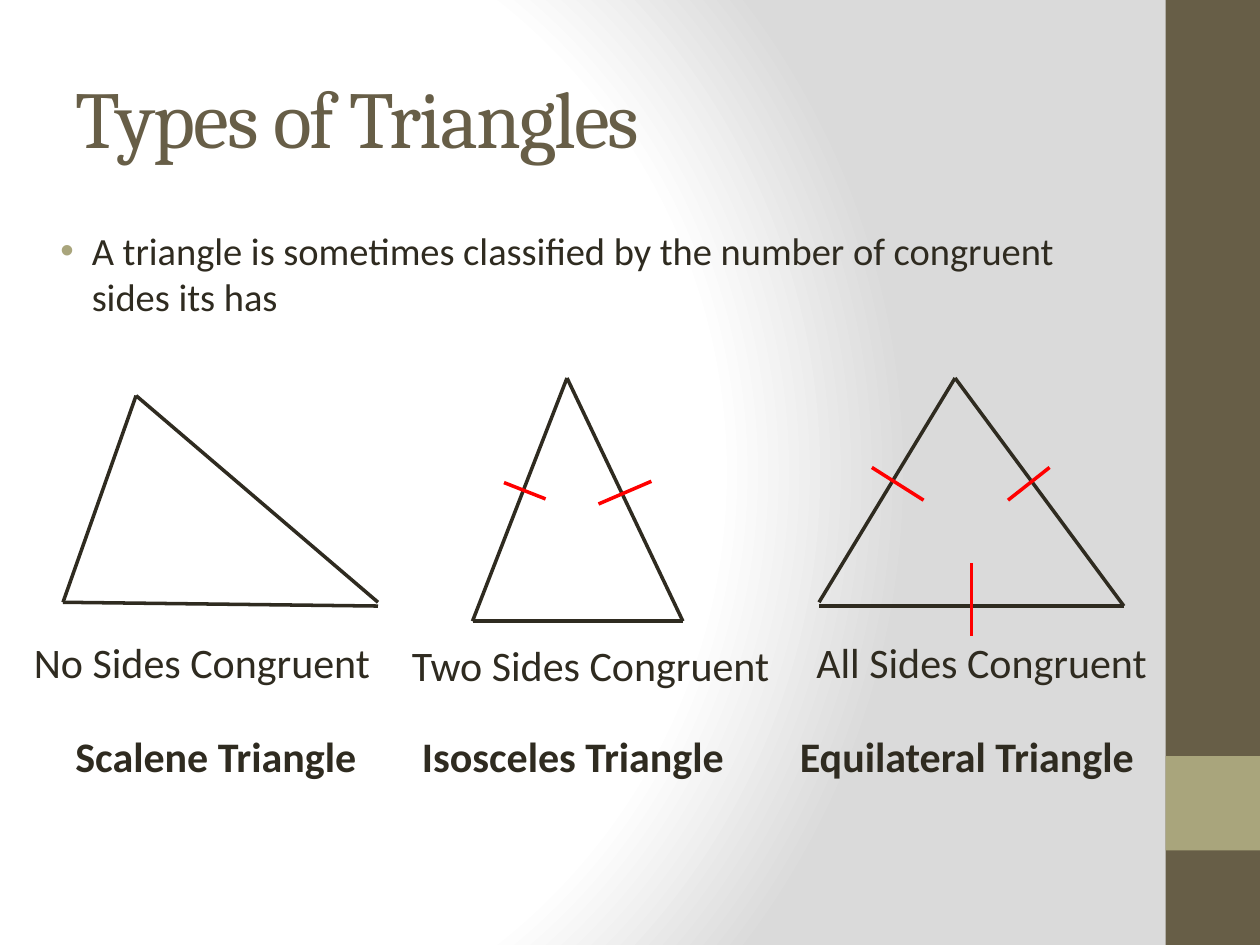
from pptx import Presentation
from pptx.dml.color import RGBColor
from pptx.enum.shapes import MSO_CONNECTOR, MSO_SHAPE
from pptx.enum.text import MSO_ANCHOR
from pptx.oxml import parse_xml
from pptx.oxml.ns import nsdecls, qn
from pptx.util import Inches, Pt

LINE = MSO_CONNECTOR.STRAIGHT
RECT = MSO_SHAPE.RECTANGLE
MIDDLE = MSO_ANCHOR.MIDDLE
TOP = MSO_ANCHOR.TOP

COLORS = {"brown": "675E47", "olive": "A9A57C", "ink": "2F2B20",
          "tick": "FF0000", "white": "FFFFFF", "gray": "DADADA"}

TITLE = "Types of Triangles"
BODY = ("A triangle is sometimes classified by the number of congruent "
        "sides its has")
BANDS = [("brown", 0, 7.5), ("olive", 6, 0.75)]
STOPS = [(0, "white"), (75, "white"), (100, "gray")]

# Sides and ticks are (x1, y1, x2, y2); captions are (text, left, top)
TRIANGLES = [
    {"sides": [(1.08, 3.14, 3, 4.78), (0.5, 4.78, 3, 4.81),
               (1.08, 3.14, 0.5, 4.78)],
     "ticks": [],
     "rule": ("No Sides Congruent", 0.17, 5),
     "name": ("Scalene Triangle", 0.5, 5.75)},
    {"sides": [(4.5, 3, 3.75, 4.93), (4.5, 3, 5.42, 4.93),
               (3.75, 4.93, 5.42, 4.93)],
     "ticks": [(4, 3.83, 4.33, 3.96), (5.17, 3.82, 4.75, 4)],
     "rule": ("Two Sides Congruent", 3.17, 5.03),
     "name": ("Isosceles Triangle", 3.25, 5.75)},
    {"sides": [(7.58, 3, 6.5, 4.78), (7.58, 3, 8.92, 4.81),
               (6.5, 4.81, 8.92, 4.81)],
     "ticks": [(6.92, 3.71, 7.33, 3.97), (8.33, 3.71, 8, 3.97),
               (7.71, 4.47, 7.71, 5.05)],
     "rule": ("All Sides Congruent", 6.38, 5),
     "name": ("Equilateral Triangle", 6.25, 5.75)},
]


def color(name):
    return RGBColor.from_string(COLORS[name])


def shade(slide):
    """Give the slide a circular gradient background."""
    slide.background.fill.solid()
    solid = slide.element.find(".//" + qn("a:solidFill"))
    stops = "".join(
        f'<a:gs pos="{pos * 1000}"><a:srgbClr val="{COLORS[name]}"/></a:gs>'
        for pos, name in STOPS)
    solid.getparent().replace(solid, parse_xml(
        f'<a:gradFill {nsdecls("a")} rotWithShape="1"><a:gsLst>{stops}'
        '</a:gsLst><a:path path="circle"><a:fillToRect l="20000" t="50000" '
        'r="100000" b="50000"/></a:path></a:gradFill>'))


def add_text(slide, text, box, size, font="Calibri", ink="ink",
             bold=False, anchor=TOP):
    frame = slide.shapes.add_textbox(*map(Inches, box)).text_frame
    frame.word_wrap = True
    frame.vertical_anchor = anchor
    frame.text = text
    para = frame.paragraphs[0]
    face = para.runs[0].font
    face.name, face.size, face.bold = font, Pt(size), bold
    face.color.rgb = color(ink)
    return para


def add_bullet(para):
    props = para._p.get_or_add_pPr()
    props.set("marL", str(Inches(0.38)))
    props.set("indent", str(Inches(-0.25)))
    for xml in (f'<a:buClr {nsdecls("a")}><a:srgbClr '
                f'val="{COLORS["olive"]}"/></a:buClr>',
                f'<a:buFont {nsdecls("a")} typeface="Arial"/>',
                f'<a:buChar {nsdecls("a")} char="•"/>'):
        props.append(parse_xml(xml))


def add_line(group, ends, ink):
    line = group.shapes.add_connector(LINE, *map(Inches, ends))
    line.line.color.rgb = color(ink)
    line.line.width = Pt(2)
    line._element.spPr.append(parse_xml(f'<a:effectLst {nsdecls("a")}/>'))


def main():
    deck = Presentation()
    deck.slide_width, deck.slide_height = Inches(10), Inches(7.5)
    slide = deck.slides.add_slide(deck.slide_layouts[6])
    shade(slide)

    for ink, top, height in BANDS:
        band = slide.shapes.add_shape(
            RECT, *map(Inches, (9.25, top, 0.75, height)))
        band.shadow.inherit = False
        band.fill.solid()
        band.fill.fore_color.rgb = color(ink)
        band.line.fill.background()

    title = add_text(slide, TITLE, (0.5, 0.3, 8.33, 1.25), 46,
                     "Cambria", "brown", anchor=MIDDLE)
    title.runs[0].font._element.set("spc", "-100")
    body = add_text(slide, BODY, (0.25, 1.75, 8.75, 5.25), 22)
    body.space_before = Pt(4.4)
    add_bullet(body)

    for shape in TRIANGLES:
        group = slide.shapes.add_group_shape()
        for part, ink in (("sides", "ink"), ("ticks", "tick")):
            for ends in shape[part]:
                add_line(group, ends, ink)
        for part in ("rule", "name"):
            text, left, top = shape[part]
            add_text(slide, text, (left, top, 3.25, 0.5), 24,
                     bold=part == "name")

    deck.save("out.pptx")


if __name__ == "__main__":
    main()
